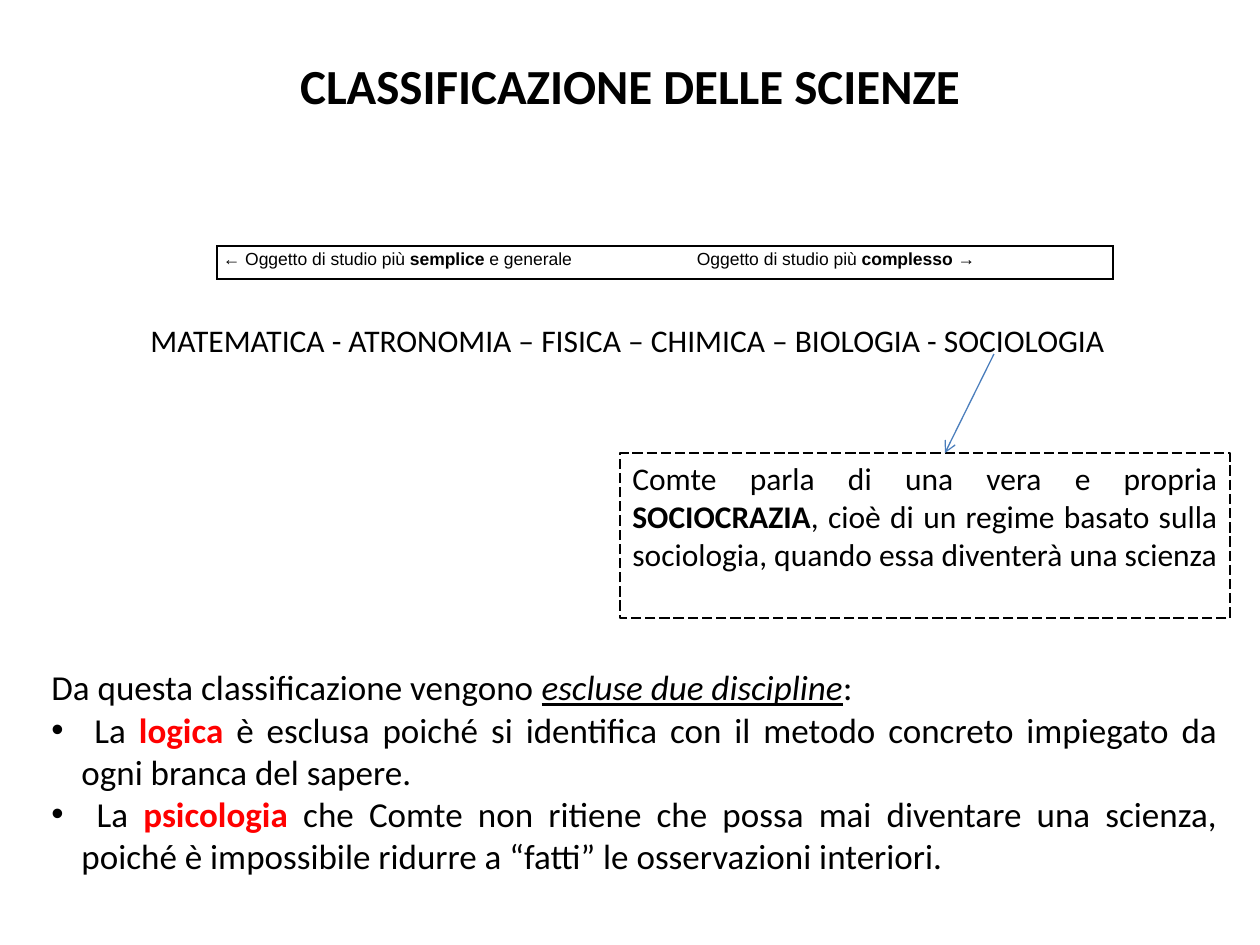
from lxml import etree
from pptx import Presentation
from pptx.dml.color import RGBColor
from pptx.enum.dml import MSO_LINE
from pptx.enum.shapes import MSO_CONNECTOR, MSO_SHAPE
from pptx.enum.text import MSO_ANCHOR, PP_ALIGN
from pptx.oxml.ns import qn
from pptx.util import Pt

PX = 914400 / 126
LEFT, CENTER, JUSTIFY = PP_ALIGN.LEFT, PP_ALIGN.CENTER, PP_ALIGN.JUSTIFY
TOP, MIDDLE = MSO_ANCHOR.TOP, MSO_ANCHOR.MIDDLE
LONG_DASH, RECT, STRAIGHT = MSO_LINE.LONG_DASH, MSO_SHAPE.RECTANGLE, MSO_CONNECTOR.STRAIGHT
COLORS = {"text": "000000", "key": "FF0000", "arrow": "4B7EBC"}
BOLD = {"bold": True}
KEY = {"bold": True, "color": "key"}
STRESS = {"italic": True, "underline": True}


def px(*values):
    return [round(v * PX) for v in values]


def rgb(name):
    return RGBColor.from_string(COLORS[name])


def write_paragraph(p, runs, size, align=LEFT, font="Calibri"):
    """Fill a paragraph with (text, format) runs."""
    p.alignment = align
    for text, fmt in runs:
        r = p.add_run()
        r.text = text
        values = {"name": font, "size": Pt(size), **fmt}
        r.font.color.rgb = rgb(values.pop("color", "text"))
        for name, value in values.items():
            setattr(r.font, name, value)


def add_bullet(p, indent):
    pPr = p._p.get_or_add_pPr()
    width = px(indent)[0]
    pPr.set("marL", str(width))
    pPr.set("indent", str(-width))
    etree.SubElement(pPr, qn("a:buFont"), typeface="Arial")
    etree.SubElement(pPr, qn("a:buChar"), char="•")


def add_tab_stop(p, position):
    tabs = etree.SubElement(p._p.get_or_add_pPr(), qn("a:tabLst"))
    etree.SubElement(tabs, qn("a:tab"), pos=str(px(position)[0]), algn="l")


def add_text(s, box, paragraphs, size, align=LEFT, anchor=TOP):
    tf = s.shapes.add_textbox(*px(*box)).text_frame
    tf.word_wrap = True
    tf.vertical_anchor = anchor
    for i, (runs, bulleted) in enumerate(paragraphs):
        p = tf.add_paragraph() if i else tf.paragraphs[0]
        write_paragraph(p, runs, size, align)
        if bulleted:
            add_bullet(p, 30)


def add_dashed_box(s, box, runs, size):
    sp = s.shapes.add_shape(RECT, *px(*box))
    sp.shadow.inherit = False
    sp.fill.background()
    sp.line.color.rgb = rgb("text")
    sp.line.width = Pt(0.75)
    sp.line.dash_style = LONG_DASH
    tf = sp.text_frame
    tf.word_wrap = True
    tf.vertical_anchor = TOP
    write_paragraph(tf.paragraphs[0], runs, size, JUSTIFY)


def add_arrow(s, start, end):
    line = s.shapes.add_connector(STRAIGHT, *px(*start, *end))
    line.line.color.rgb = rgb("arrow")
    line.line.width = Pt(0.75)
    etree.SubElement(line.line._get_or_add_ln(), qn("a:tailEnd"), type="arrow")
    etree.SubElement(line._element.spPr, qn("a:effectLst"))


def add_cell_borders(cell):
    tcPr = cell._tc.get_or_add_tcPr()
    for i, side in enumerate(("lnL", "lnR", "lnT", "lnB")):
        ln = etree.Element(qn(f"a:{side}"), w=str(Pt(1)))
        fill = etree.SubElement(ln, qn("a:solidFill"))
        etree.SubElement(fill, qn("a:srgbClr"), val=COLORS["text"])
        tcPr.insert(i, ln)


def add_scale_table(s, box, runs, size, tab):
    table = s.shapes.add_table(1, 1, *px(*box)).table
    table.first_row = table.horz_banding = False
    cell = table.cell(0, 0)
    cell.fill.background()
    cell.margin_left, cell.margin_right, cell.margin_top, cell.margin_bottom = px(6, 6, 0, 0)
    add_cell_borders(cell)
    p = cell.text_frame.paragraphs[0]
    p.line_spacing = 1.2
    write_paragraph(p, runs, size, JUSTIFY, "Arial")
    add_tab_stop(p, tab)


def main():
    prs = Presentation()
    prs.slide_width, prs.slide_height = px(1260, 945)
    s = prs.slides.add_slide(prs.slide_layouts[6])

    # Scale from simple to complex
    add_scale_table(s, (217, 246, 896, 33), [
        ("← Oggetto di studio più ", {}), ("semplice", BOLD),
        (" e generale\tOggetto di studio più ", {}), ("complesso →", BOLD),
    ], 10, 474)

    # Excluded disciplines
    add_text(s, (39, 659, 1191, 224), [
        ([("Da questa classificazione vengono ", {}),
          ("escluse due discipline", STRESS), (":", {})], False),
        ([(" La ", {}), ("logica", KEY),
          (" è esclusa poiché si identifica con il metodo concreto impiegato "
           "da ogni branca del sapere. ", {})], True),
        ([(" La ", {}), ("psicologia", KEY),
          (" che Comte non ritiene che possa mai diventare una scienza, poiché è "
           "impossibile ridurre a “fatti” le osservazioni interiori.", {})], True),
    ], 20, JUSTIFY, MIDDLE)

    # Title
    add_text(s, (187, 49, 886, 72), [([("CLASSIFICAZIONE DELLE SCIENZE", BOLD)], False)],
             28, CENTER)

    # Sociocracy note and its arrow
    add_dashed_box(s, (620, 453, 610, 165), [
        ("Comte parla di una vera e propria ", {}), ("SOCIOCRAZIA", BOLD),
        (", cioè di un regime basato sulla sociologia, quando essa diventerà una scienza", {}),
    ], 18)
    add_arrow(s, (994, 354), (945, 453))

    # Row of sciences
    sciences = "MATEMATICA - ATRONOMIA – FISICA – CHIMICA – BIOLOGIA - SOCIOLOGIA"
    add_text(s, (138, 315, 1004, 51), [([(sciences, {})], False)], 18)

    prs.save("out.pptx")


if __name__ == "__main__":
    main()
